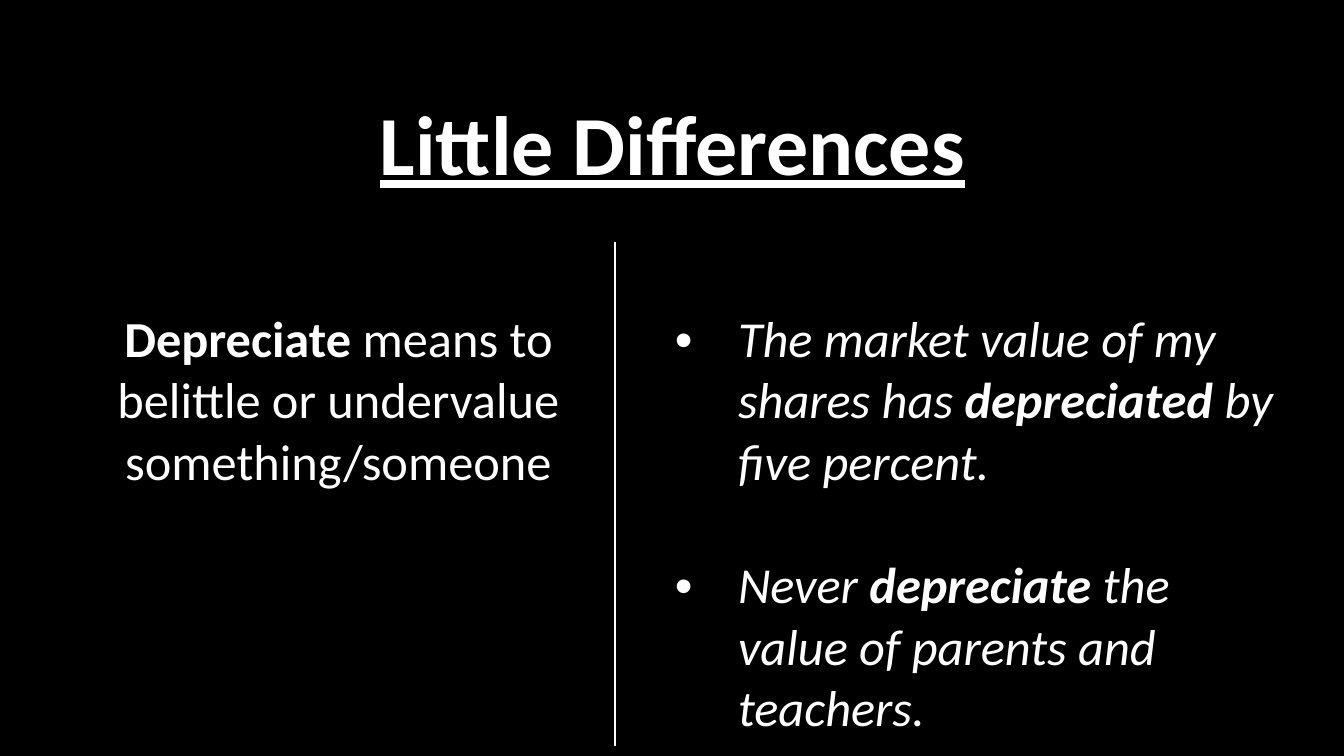
from lxml.etree import SubElement
from pptx import Presentation
from pptx.dml.color import RGBColor
from pptx.enum.text import PP_ALIGN as Align
from pptx.oxml.ns import qn
from pptx.util import Pt

EMU_PER_PX = 914400 / 100.8
WHITE, BLACK = "FFFFFF", "000000"


def px(length):
    return round(length * EMU_PER_PX)


def colour(hex_code):
    return RGBColor.from_string(hex_code)


class WordSlide:
    """Holds the text style and the current slide."""

    font_name, text_size, title_size = "Calibri", 36, 60
    line_gap = 44  # one line of body text, in points

    def __init__(self, deck):
        self.slide = deck.slides.add_slide(deck.slide_layouts[6])
        background = self.slide.background.fill
        background.solid()
        background.fore_color.rgb = colour(BLACK)

    def table(self, left, top, widths, heights):
        grid = self.slide.shapes.add_table(
            len(heights), len(widths), px(left), px(top),
            px(sum(widths)), px(sum(heights))).table
        grid.first_row = grid.horz_banding = False
        for column, width in zip(grid.columns, widths):
            column.width = px(width)
        for row, height in zip(grid.rows, heights):
            row.height = px(height)
        return grid

    def cell(self, cell, ruled_side=None):
        """Clear the cell's fill and rule at most one of its sides."""
        cell.margin_top = px(67)
        properties = cell._tc.get_or_add_tcPr()
        for side in "LRTB":
            border = SubElement(properties, qn(f"a:ln{side}"), w=str(Pt(1)))
            if side == ruled_side:
                fill = SubElement(border, qn("a:solidFill"))
                SubElement(fill, qn("a:srgbClr"), val=WHITE)
            else:
                SubElement(border, qn("a:noFill"))
        cell.fill.background()

    def runs(self, paragraph, parts, size=text_size, italic=False, underline=False):
        """Add (text, bold) parts to the paragraph."""
        for text, bold in parts:
            run = paragraph.add_run()
            run.text = text
            font = run.font
            font.name, font.size = self.font_name, Pt(size)
            font.bold, font.italic, font.underline = bold, italic, underline
            font.color.rgb = colour(WHITE)

    def centred(self, cell, parts, **style):
        paragraph = cell.text_frame.paragraphs[0]
        paragraph.alignment = Align.CENTER
        self.runs(paragraph, parts, **style)

    def bullets(self, cell, items):
        frame = cell.text_frame
        for number, parts in enumerate(items):
            paragraph = frame.add_paragraph() if number else frame.paragraphs[0]
            if number:
                paragraph.space_before = Pt(self.line_gap)
            properties = paragraph._p.get_or_add_pPr()
            properties.set("marL", str(px(113)))
            properties.set("indent", str(px(-63)))
            SubElement(properties, qn("a:buFont"), typeface="Arial")
            SubElement(properties, qn("a:buChar"), char="•")
            self.runs(paragraph, parts, italic=True)


def main():
    deck = Presentation()
    deck.slide_width, deck.slide_height = px(1344), px(756)
    page = WordSlide(deck)
    grid = page.table(62, 29, widths=(553, 668), heights=(213, 503))

    # Heading across both columns
    heading = grid.cell(0, 0)
    heading.merge(grid.cell(0, 1))
    page.cell(heading)
    page.cell(grid.cell(0, 1))
    page.centred(heading, [("Little Differences", True)],
                 size=page.title_size, underline=True)

    # Meaning of the word
    meaning = grid.cell(1, 0)
    page.cell(meaning, ruled_side="R")
    page.centred(meaning, [
        ("Depreciate", True),
        (" means to belittle or undervalue something/someone", False)])

    # Example sentences
    examples = grid.cell(1, 1)
    page.cell(examples, ruled_side="L")
    page.bullets(examples, [
        [("The market value of my shares has ", False),
         ("depreciated", True),
         (" by five percent.", False)],
        [("Never ", False),
         ("depreciate", True),
         (" the value of parents and teachers.", False)]])

    deck.save("out.pptx")


if __name__ == "__main__":
    main()
